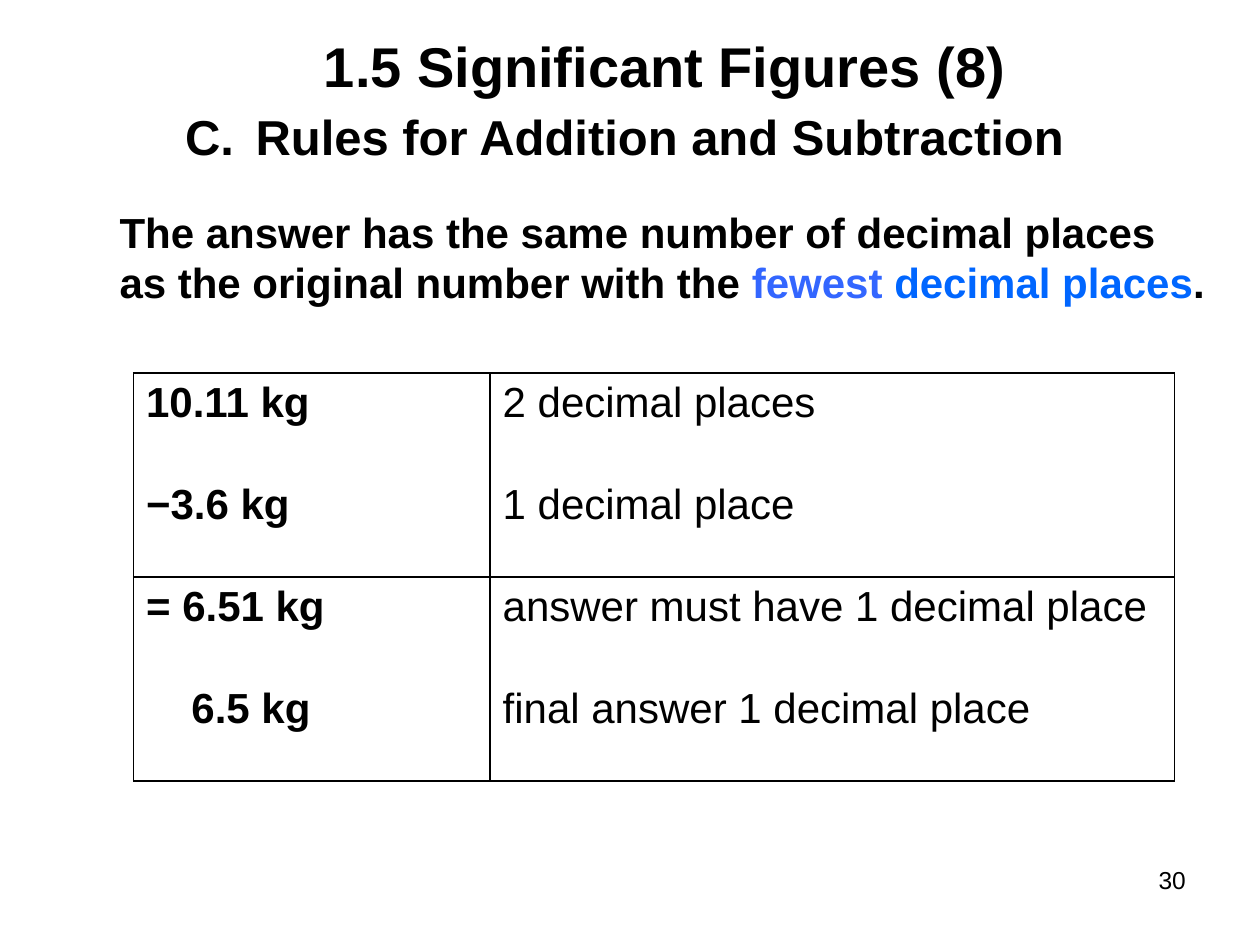
from lxml import etree
from pptx import Presentation
from pptx.dml.color import RGBColor
from pptx.enum.text import MSO_ANCHOR, PP_ALIGN
from pptx.oxml.ns import qn
from pptx.util import Inches, Pt

LEFT, CENTER, RIGHT = PP_ALIGN.LEFT, PP_ALIGN.CENTER, PP_ALIGN.RIGHT
TOP, MIDDLE = MSO_ANCHOR.TOP, MSO_ANCHOR.MIDDLE
BLACK = RGBColor(0x00, 0x00, 0x00)
VIOLET_BLUE = RGBColor(0x33, 0x66, 0xFF)
BLUE = RGBColor(0x00, 0x66, 0xFF)
FONT = "Arial"

TITLE = "1.5 Significant Figures (8) "
HEADING = "Rules for Addition and Subtraction"
RULE = [
    [("The answer has the same number of decimal places", BLACK)],
    [("as the original number with the ", BLACK), ("fewest ", VIOLET_BLUE),
     ("decimal places", BLUE), (".", BLACK)],
]
ROWS = [
    ("10.11 kg", "2 decimal places"),
    ("−3.6 kg", "1 decimal place"),
    ("= 6.51 kg", "answer must have 1 decimal place"),
    ("6.5 kg", "final answer 1 decimal place"),
]
PAGE = "30"
COL_WIDTHS = (2.83, 5.43)
ROW_HEIGHT = 0.81


def add_run(p, text, size, bold=True, color=BLACK):
    r = p.add_run()
    r.text = text
    r.font.name = FONT
    r.font.size = Pt(size)
    r.font.bold = bold
    r.font.color.rgb = color


def fill_text(shape, lines, size, bold=True, align=LEFT, anchor=TOP):
    tf = shape.text_frame
    tf.word_wrap = True
    tf.vertical_anchor = anchor
    for i, runs in enumerate(lines):
        p = tf.add_paragraph() if i else tf.paragraphs[0]
        p.alignment = align
        for text, color in runs:
            add_run(p, text, size, bold, color)
    return tf


def add_text(s, box, lines, size, **style):
    shape = s.shapes.add_textbox(*map(Inches, box))
    return fill_text(shape, lines, size, **style)


def set_indent(p, margin, indent):
    pPr = p._p.get_or_add_pPr()
    pPr.set("marL", str(Inches(margin)))
    pPr.set("indent", str(Inches(indent)))
    return pPr


def set_borders(cell, visible):
    tcPr = cell._tc.get_or_add_tcPr()
    for side in "LRTB":
        ln = etree.SubElement(tcPr, qn(f"a:ln{side}"), w=str(Pt(1)))
        if side in visible:
            fill = etree.SubElement(ln, qn("a:solidFill"))
            etree.SubElement(fill, qn("a:srgbClr"), val=str(BLACK))
        else:
            etree.SubElement(ln, qn("a:noFill"))


def add_results_table(s):
    frame = s.shapes.add_table(
        len(ROWS), len(COL_WIDTHS), Inches(1.06), Inches(2.96),
        Inches(sum(COL_WIDTHS)), Inches(ROW_HEIGHT * len(ROWS)))
    table = frame.table
    table.first_row = table.horz_banding = False
    for column, width in zip(table.columns, COL_WIDTHS):
        column.width = Inches(width)
    for i, texts in enumerate(ROWS):
        table.rows[i].height = Inches(ROW_HEIGHT)
        for j, text in enumerate(texts):
            cell = table.cell(i, j)
            add_run(cell.text_frame.paragraphs[0], text, 24, bold=j == 0)
            set_borders(cell, "LRB" if i % 2 else "LRT")
            cell.fill.background()
    set_indent(table.cell(3, 0).text_frame.paragraphs[0], 0.36, 0)


def main():
    prs = Presentation()
    prs.slide_width, prs.slide_height = Inches(10), Inches(7.5)
    s = prs.slides.add_slide(prs.slide_layouts[5])

    add_text(s, (8.47, 6.82, 1.04, 0.34), [[(PAGE, BLACK)]], 14,
             bold=False, align=RIGHT)

    title = s.shapes.title
    title.left, title.top, title.width, title.height = map(
        Inches, (2.44, 0.22, 5.8, 0.59))
    fill_text(title, [[(TITLE, BLACK)]], 32, align=CENTER, anchor=MIDDLE)

    tf = add_text(s, (1.37, 0.8, 7.32, 0.47), [[(HEADING, BLACK)]], 28)
    pPr = set_indent(tf.paragraphs[0], 0.56, -0.56)
    etree.SubElement(pPr, qn("a:buFont"), typeface=FONT)
    etree.SubElement(pPr, qn("a:buAutoNum"), type="alphaUcPeriod", startAt="3")

    add_text(s, (0.85, 1.59, 8.98, 0.86), RULE, 24)
    add_results_table(s)
    prs.save("out.pptx")


if __name__ == "__main__":
    main()
